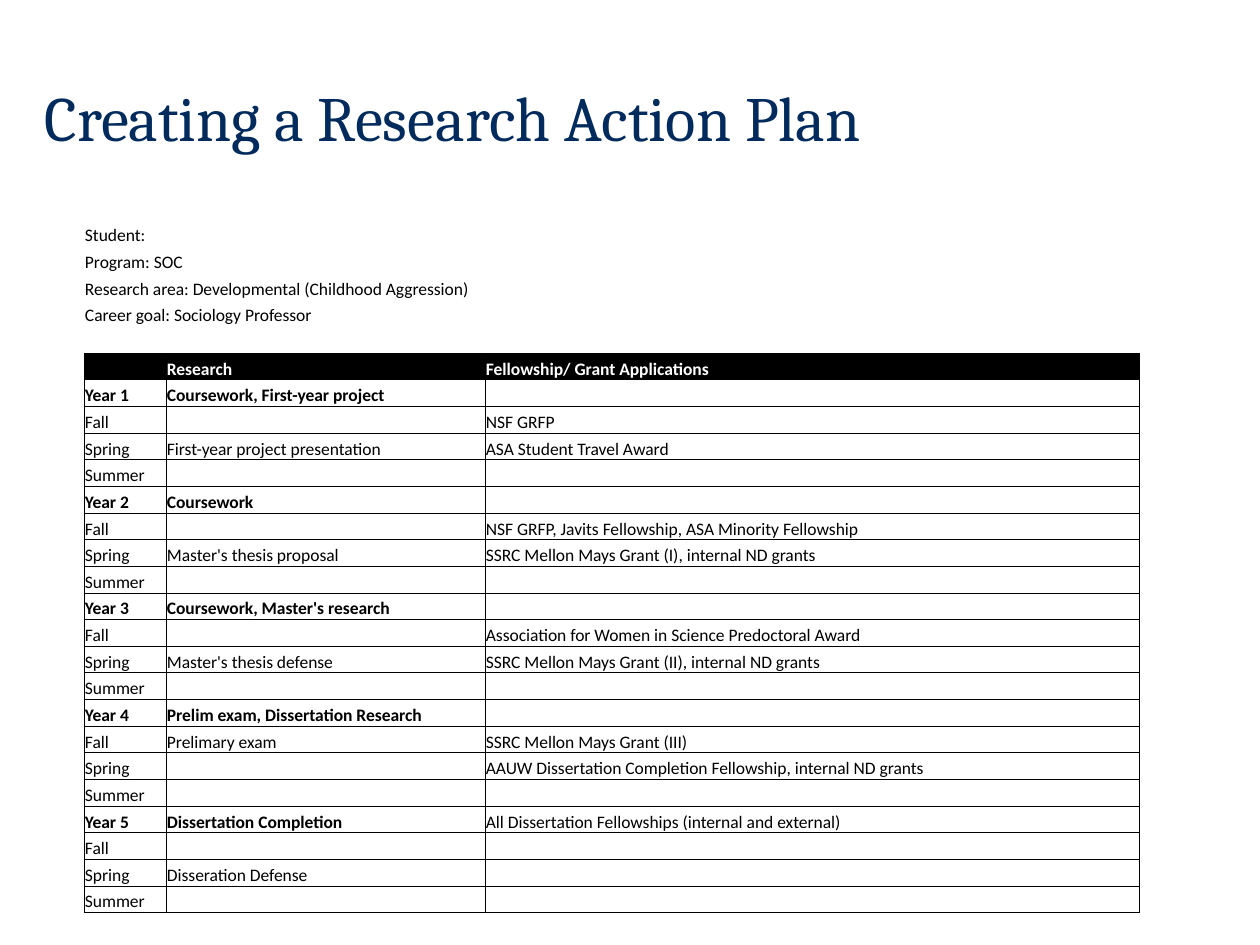
"""Build a slide with a five-year research action plan table."""
from dataclasses import dataclass

from lxml import etree
from pptx import Presentation
from pptx.dml.color import RGBColor
from pptx.enum.text import MSO_ANCHOR
from pptx.oxml.ns import qn
from pptx.util import Pt

MIDDLE, BOTTOM = MSO_ANCHOR.MIDDLE, MSO_ANCHOR.BOTTOM
NAVY = RGBColor(0x00, 0x2B, 0x5C)
BLACK = RGBColor(0x00, 0x00, 0x00)
WHITE = RGBColor(0xFF, 0xFF, 0xFF)
PX = 7257
NO_STYLE = "{2D5ABB26-0587-4C30-8999-92F81FD0307C}"
COLUMN_WIDTHS = (82, 319, 655)
TABLE_HEIGHT = 693
TEXT_SIZE = Pt(10)
BORDER_WIDTH = Pt(0.5)
ALL_SIDES = ("L", "R", "T", "B")


@dataclass(frozen=True)
class Row:
    texts: tuple[str, str, str] = ("", "", "")
    span: int = 1
    bold_columns: int = 0
    sides: tuple[str, ...] = ALL_SIDES
    color: RGBColor = BLACK
    fill: RGBColor | None = None


@dataclass(frozen=True)
class Year:
    focus: str
    awards: str = ""
    fall: tuple[str, str] = ("", "")
    spring: tuple[str, str] = ("", "")


DETAILS = [
    Row(("Student:", "", ""), sides=()),
    Row(("Program: SOC", "", ""), span=2, sides=()),
    Row(("Research area: Developmental (Childhood Aggression)", "", ""), span=3, sides=()),
    Row(("Career goal: Sociology Professor", "", ""), span=2, sides=()),
    Row(sides=("B",)),
]
HEADER = Row(("", "Research", "Fellowship/ Grant Applications"),
             bold_columns=3, color=WHITE, fill=BLACK)
YEARS = [
    Year("Coursework, First-year project",
         fall=("", "NSF GRFP"),
         spring=("First-year project presentation", "ASA Student Travel Award")),
    Year("Coursework",
         fall=("", "NSF GRFP, Javits Fellowship, ASA Minority Fellowship"),
         spring=("Master's thesis proposal", "SSRC Mellon Mays Grant (I), internal ND grants")),
    Year("Coursework, Master's research",
         fall=("", "Association for Women in Science Predoctoral Award"),
         spring=("Master's thesis defense", "SSRC Mellon Mays Grant (II), internal ND grants")),
    Year("Prelim exam, Dissertation Research",
         fall=("Prelimary exam", "SSRC Mellon Mays Grant (III)"),
         spring=("", "AAUW Dissertation Completion Fellowship, internal ND grants")),
    Year("Dissertation Completion",
         awards="All Dissertation Fellowships (internal and external)",
         spring=("Disseration Defense", "")),
]


def px(length: int) -> int:
    """Turn pixels into EMU."""
    return length * PX


def year_rows(number: int, year: Year) -> list[Row]:
    """Return the heading row and the three term rows of a year."""
    return [
        Row((f"Year {number}", year.focus, year.awards), bold_columns=2),
        Row(("Fall", *year.fall)),
        Row(("Spring", *year.spring)),
        Row(("Summer", "", "")),
    ]


def draw_title(s, text: str) -> None:
    """Draw the slide title."""
    tf = s.shapes.add_textbox(px(32), px(38), px(1008), px(157)).text_frame
    tf.word_wrap = True
    tf.vertical_anchor = MIDDLE
    tf.text = text
    font = tf.paragraphs[0].runs[0].font
    font.name, font.size, font.color.rgb = "Cambria", Pt(36), NAVY


def draw_borders(cell, sides: tuple[str, ...]) -> None:
    """Give the cell a thin black line on the named sides."""
    tc_pr = cell._tc.get_or_add_tcPr()
    for side in sides:
        line = etree.SubElement(tc_pr, qn(f"a:ln{side}"), w=str(BORDER_WIDTH))
        fill = etree.SubElement(line, qn("a:solidFill"))
        etree.SubElement(fill, qn("a:srgbClr"), val=str(BLACK))


def draw_cell(cell, row: Row, column: int) -> None:
    """Fill in and format one cell."""
    cell.margin_left = cell.margin_right = cell.margin_top = px(1)
    cell.margin_bottom = 0
    cell.vertical_anchor = BOTTOM
    draw_borders(cell, row.sides)
    if row.fill is None:
        cell.fill.background()
    else:
        cell.fill.solid()
        cell.fill.fore_color.rgb = row.fill
    p = cell.text_frame.paragraphs[0]
    p.text = row.texts[column]
    for r in p.runs:
        r.font.name, r.font.size = "Calibri", TEXT_SIZE
        r.font.bold = column < row.bold_columns
        r.font.color.rgb = row.color
    if not p.runs:
        etree.SubElement(p._p, qn("a:endParaRPr"), sz=str(TEXT_SIZE.centipoints))


def draw_plan(s, rows: list[Row]) -> None:
    """Draw the action plan table."""
    table = s.shapes.add_table(len(rows), len(COLUMN_WIDTHS), px(84), px(220),
                               px(sum(COLUMN_WIDTHS)), px(TABLE_HEIGHT)).table
    table.first_row = table.horz_banding = False
    table._tbl.tblPr.find(qn("a:tableStyleId")).text = NO_STYLE
    for column, width in zip(table.columns, COLUMN_WIDTHS):
        column.width = px(width)
    for i, row in enumerate(rows):
        table.rows[i].height = px(TABLE_HEIGHT) // len(rows)
        for j in range(len(COLUMN_WIDTHS)):
            draw_cell(table.cell(i, j), row, j)
        if row.span > 1:
            table.cell(i, 0).merge(table.cell(i, row.span - 1))


def main() -> None:
    """Build and save the slide."""
    prs = Presentation()
    prs.slide_width, prs.slide_height = px(1260), px(945)
    s = prs.slides.add_slide(prs.slide_layouts[6])
    draw_title(s, "Creating a Research Action Plan")
    rows = [*DETAILS, HEADER]
    for number, year in enumerate(YEARS, start=1):
        rows += year_rows(number, year)
    draw_plan(s, rows)
    prs.save("out.pptx")


if __name__ == "__main__":
    main()
